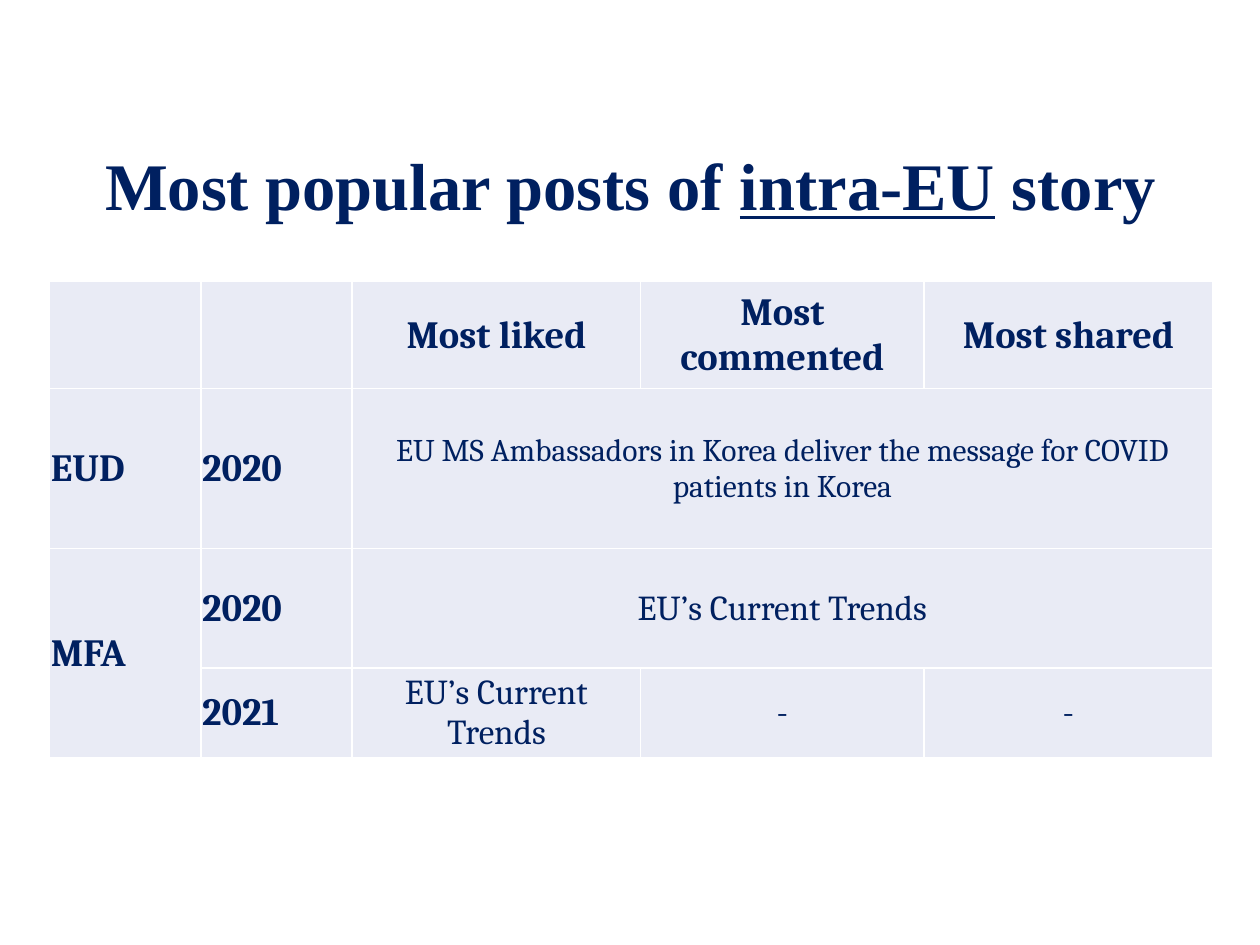
from lxml.etree import SubElement
from pptx import Presentation
from pptx.dml.color import RGBColor
from pptx.enum.text import MSO_ANCHOR, MSO_AUTO_SIZE, PP_ALIGN
from pptx.oxml.ns import qn
from pptx.util import Pt

COLORS = {"navy": "002060", "cell": "E9EBF5", "border": "FFFFFF"}
COL_WIDTHS = [86.4, 86.4, 164.9, 162, 164.9]
ROW_HEIGHTS = [61.2, 91.4, 68.4, 51.1]
HEADERS = ["Most liked", "Most commented", "Most shared"]
TRENDS = "EU’s Current Trends"
AMBASSADORS = "EU MS Ambassadors in Korea deliver the message for COVID patients in Korea"


class Deck:
    title_font = "Times New Roman"
    table_font = "Cambria"

    def __init__(self):
        self.prs = Presentation()
        self.prs.slide_width, self.prs.slide_height = Pt(720), Pt(540)
        self.s = self.prs.slides.add_slide(self.prs.slide_layouts[5])

    def run(self, p, text, font, size, bold=True, underline=False):
        r = p.add_run()
        r.text = text
        r.font.name = font
        r.font.size = Pt(size)
        r.font.bold = bold
        r.font.underline = underline
        r.font.color.rgb = RGBColor.from_string(COLORS["navy"])

    def title(self, runs, x, y, w, h):
        sp = self.s.shapes.title
        sp.left, sp.top, sp.width, sp.height = Pt(x), Pt(y), Pt(w), Pt(h)
        tf = sp.text_frame
        tf.word_wrap = True
        tf.auto_size = MSO_AUTO_SIZE.NONE
        tf.vertical_anchor = MSO_ANCHOR.MIDDLE
        p = tf.paragraphs[0]
        p.alignment = PP_ALIGN.CENTER
        p.line_spacing = 0.9
        for text, underline in runs:
            self.run(p, text, self.title_font, 38, underline=underline)

    def table(self, x, y, widths, heights):
        frame = self.s.shapes.add_table(
            len(heights), len(widths), Pt(x), Pt(y), Pt(sum(widths)), Pt(sum(heights)))
        tbl = frame.table
        tbl.first_row = tbl.horz_banding = False
        for col, width in zip(tbl.columns, widths):
            col.width = Pt(width)
        for row, height in zip(tbl.rows, heights):
            row.height = Pt(height)
        for cell in tbl.iter_cells():
            self.cell_style(cell)
        return tbl

    def cell_style(self, cell):
        cell.vertical_anchor = MSO_ANCHOR.MIDDLE
        cell.margin_left = cell.margin_right = cell.margin_top = Pt(0.7)
        cell.margin_bottom = Pt(0)
        tcPr = cell._tc.get_or_add_tcPr()
        for side in ("lnL", "lnR", "lnT", "lnB"):
            ln = SubElement(tcPr, qn(f"a:{side}"), w=str(Pt(1)))
            fill = SubElement(ln, qn("a:solidFill"))
            SubElement(fill, qn("a:srgbClr"), val=COLORS["border"])
        cell.fill.solid()
        cell.fill.fore_color.rgb = RGBColor.from_string(COLORS["cell"])

    def cell_text(self, cell, text, size=22, bold=True, align=PP_ALIGN.CENTER):
        p = cell.text_frame.paragraphs[0]
        p.alignment = align
        self.run(p, text, self.table_font, size, bold)


def main():
    deck = Deck()
    deck.title([("Most popular posts of ", False), ("intra-EU", True), (" story", False)],
               8.6, 70.6, 703.4, 74.2)
    tbl = deck.table(28.4, 160.8, COL_WIDTHS, ROW_HEIGHTS)
    for row in (1, 2):
        tbl.cell(row, 2).merge(tbl.cell(row, 4))
    tbl.cell(2, 0).merge(tbl.cell(3, 0))

    for col, text in enumerate(HEADERS, 2):
        deck.cell_text(tbl.cell(0, col), text)
    labels = [(1, 0, "EUD"), (2, 0, "MFA"), (1, 1, "2020"), (2, 1, "2020"), (3, 1, "2021")]
    for row, col, text in labels:
        deck.cell_text(tbl.cell(row, col), text, align=PP_ALIGN.LEFT)
    posts = [(1, 2, AMBASSADORS, 18), (2, 2, TRENDS, 20), (3, 2, TRENDS, 20),
             (3, 3, "-", 20), (3, 4, "-", 20)]
    for row, col, text, size in posts:
        deck.cell_text(tbl.cell(row, col), text, size, bold=False)
    deck.prs.save("out.pptx")


if __name__ == "__main__":
    main()
